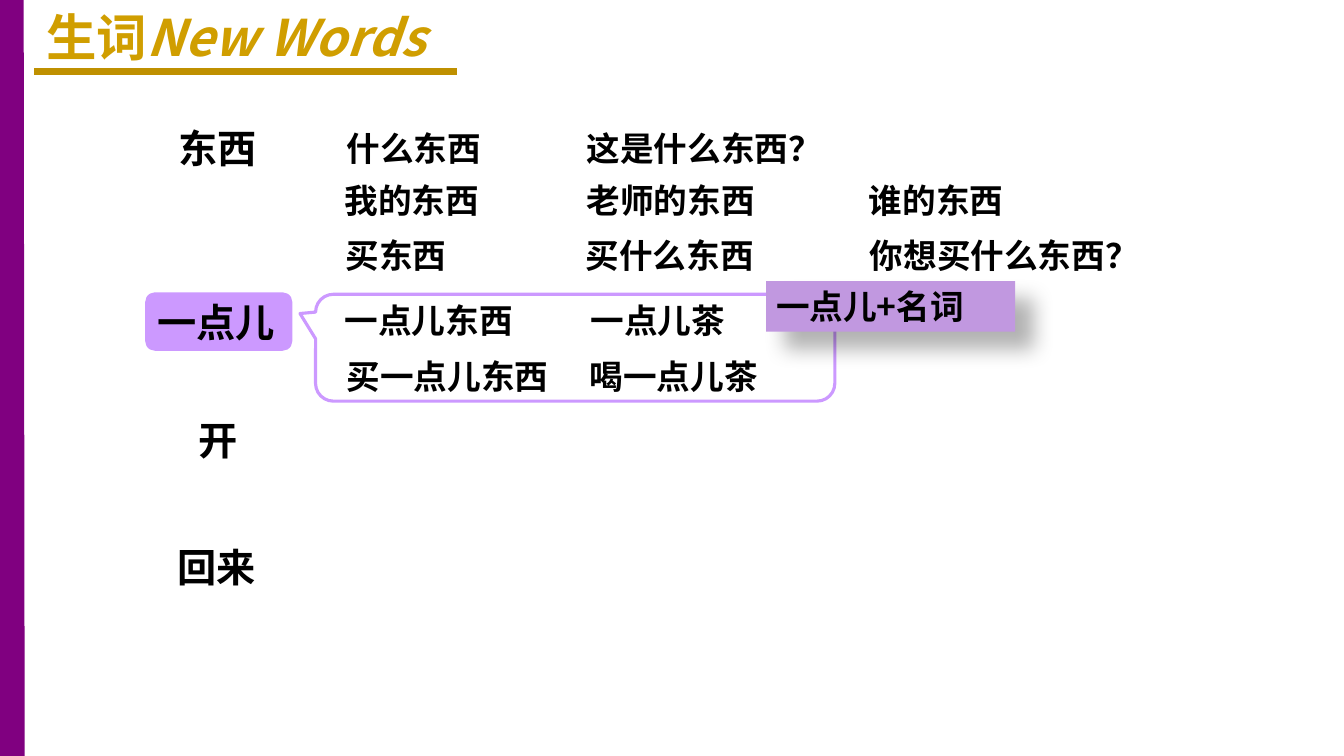
from lxml import etree
from pptx import Presentation
from pptx.dml.color import RGBColor
from pptx.enum.shapes import MSO_CONNECTOR, MSO_SHAPE
from pptx.enum.text import MSO_ANCHOR, MSO_AUTO_SIZE, PP_ALIGN
from pptx.oxml.ns import qn
from pptx.util import Pt

PX = 9144
STRAIGHT = MSO_CONNECTOR.STRAIGHT
ROUNDED = MSO_SHAPE.ROUNDED_RECTANGLE
CALLOUT = MSO_SHAPE.ROUNDED_RECTANGULAR_CALLOUT
RECTANGLE = MSO_SHAPE.RECTANGLE
TOP = MSO_ANCHOR.TOP
GROW = MSO_AUTO_SIZE.SHAPE_TO_FIT_TEXT
LEFT, CENTER = PP_ALIGN.LEFT, PP_ALIGN.CENTER
CHINESE_FONT = "Noto Sans CJK SC"
LILAC = "CC99FF"


def color(value):
    return RGBColor.from_string(value)


def write(shape, *texts, size=24, font=CHINESE_FONT, fill="000000", align=LEFT, wrap=False):
    frame = shape.text_frame
    frame.word_wrap = wrap
    frame.auto_size = GROW
    frame.vertical_anchor = TOP
    paragraph = frame.paragraphs[0]
    paragraph.alignment = align
    for text in texts:
        run = paragraph.add_run()
        run.text = text
        run.font.size = Pt(size)
        run.font.bold = True
        run.font.name = font
        run.font.color.rgb = color(fill)
        east_asian = etree.SubElement(run.font._element, qn("a:ea"))
        east_asian.set("typeface", CHINESE_FONT)
    return paragraph


presentation = Presentation()
presentation.slide_width = 1333 * PX
presentation.slide_height = 750 * PX
slide = presentation.slides.add_slide(presentation.slide_layouts[6])
shapes = slide.shapes

highlight = shapes.add_shape(ROUNDED, 144 * PX, 290 * PX, 146 * PX, 58 * PX)
highlight.fill.solid()
highlight.fill.fore_color.rgb = color(LILAC)
highlight.line.fill.background()
highlight.shadow.inherit = False

callout = shapes.add_shape(CALLOUT, 313 * PX, 292 * PX, 515 * PX, 106 * PX)
callout.adjustments[0] = -0.53
callout.adjustments[1] = -0.32
callout.fill.solid()
callout.fill.fore_color.rgb = color("FFFFFF")
callout.line.color.rgb = color(LILAC)
callout.line.width = Pt(2.25)
callout.shadow.inherit = False

for x1, y1, x2, y2, line_color, width in [
    (12, 750, 11, -2, "800080", 18),
    (34, 71, 453, 71, "BF9000", 5.5),
]:
    line = shapes.add_connector(STRAIGHT, x1 * PX, y1 * PX, x2 * PX, y2 * PX)
    line.line.color.rgb = color(line_color)
    line.line.width = Pt(width)
    etree.SubElement(line._element.spPr, qn("a:effectLst"))

title = shapes.add_textbox(36 * PX, 1 * PX, 417 * PX, 71 * PX)
title_paragraph = write(title, "生词", "New Words", size=36, fill="D09E00")
title_paragraph.runs[1].font.italic = True

for word, left, top, width in [
    ("东西", 166, 118, 99),
    ("一点儿", 140, 291, 149),
    ("开", 167, 408, 99),
    ("回来", 165, 534, 99),
]:
    box = shapes.add_textbox(left * PX, top * PX, width * PX, 57 * PX)
    write(box, word, size=28, font="Calibri", align=CENTER, wrap=True)

phrase_rows = [
    (122, [("什么东西", 334, 155), ("这是什么东西？", 572, 256)]),
    (174, [("我的东西", 332, 155), ("老师的东西", 572, 189), ("谁的东西", 852, 155)]),
    (228, [("买东西", 333, 121), ("买什么东西", 571, 188), ("你想买什么东西？", 853, 290)]),
    (293, [("一点儿东西", 332, 189), ("一点儿茶", 576, 155)]),
    (348, [("买一点儿东西", 334, 222), ("喝一点儿茶", 575, 197)]),
]
for top, phrases in phrase_rows:
    for phrase, left, width in phrases:
        box = shapes.add_textbox(left * PX, top * PX, width * PX, 51 * PX)
        write(box, phrase)

pattern = shapes.add_shape(RECTANGLE, 760 * PX, 279 * PX, 247 * PX, 50 * PX)
pattern.fill.solid()
pattern.fill.fore_color.rgb = color("C198E0")
pattern.line.fill.background()
pattern.shadow.inherit = False
effects = pattern._element.spPr.find(qn("a:effectLst"))
shadow = etree.SubElement(effects, qn("a:outerShdw"), blurRad=str(Pt(15)),
                          dist=str(Pt(18)), dir="2700000", algn="tl", rotWithShape="0")
shadow_color = etree.SubElement(shadow, qn("a:srgbClr"), val="000000")
etree.SubElement(shadow_color, qn("a:alpha"), val="30000")
write(pattern, "一点儿+名词", wrap=True)

presentation.save("out.pptx")
